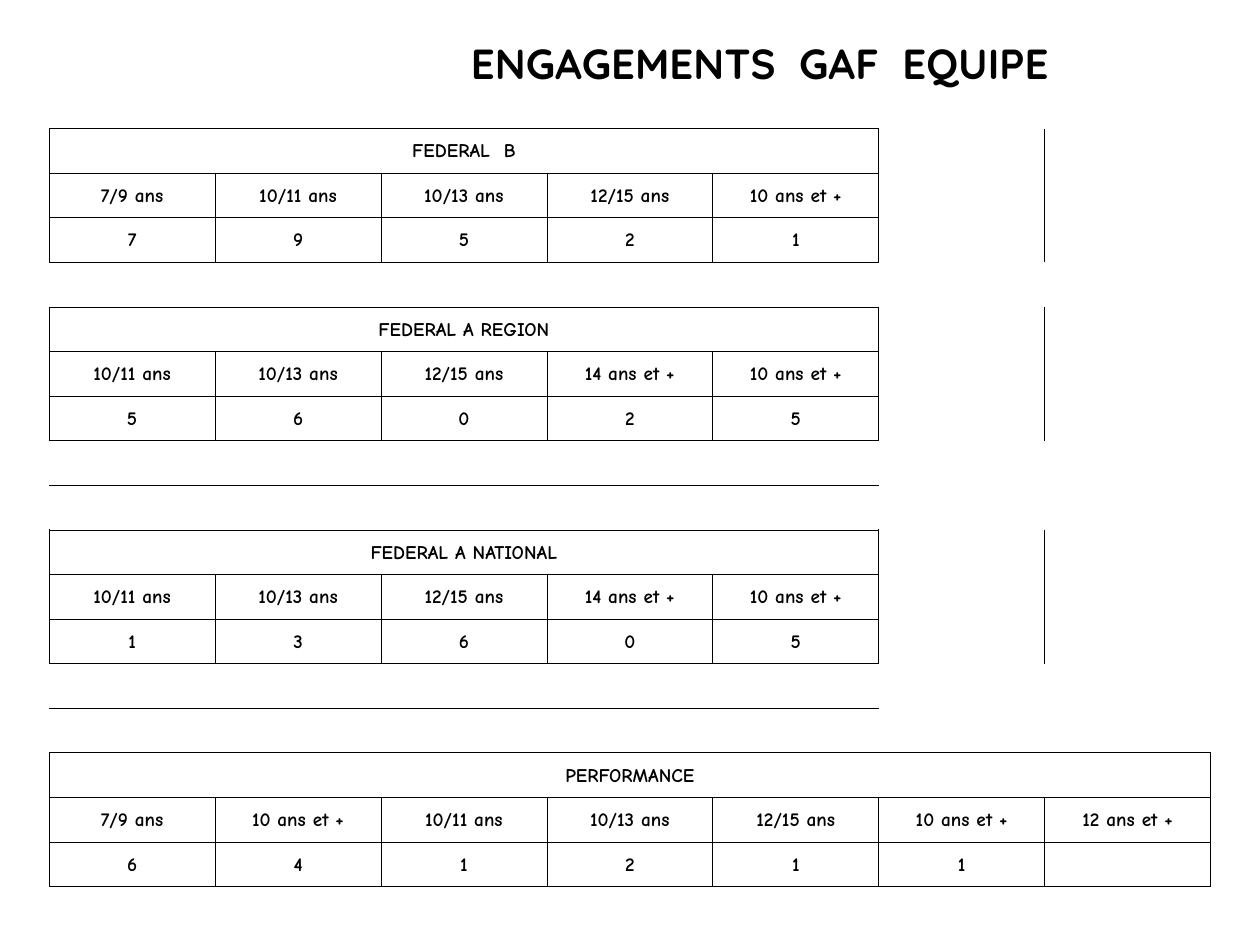
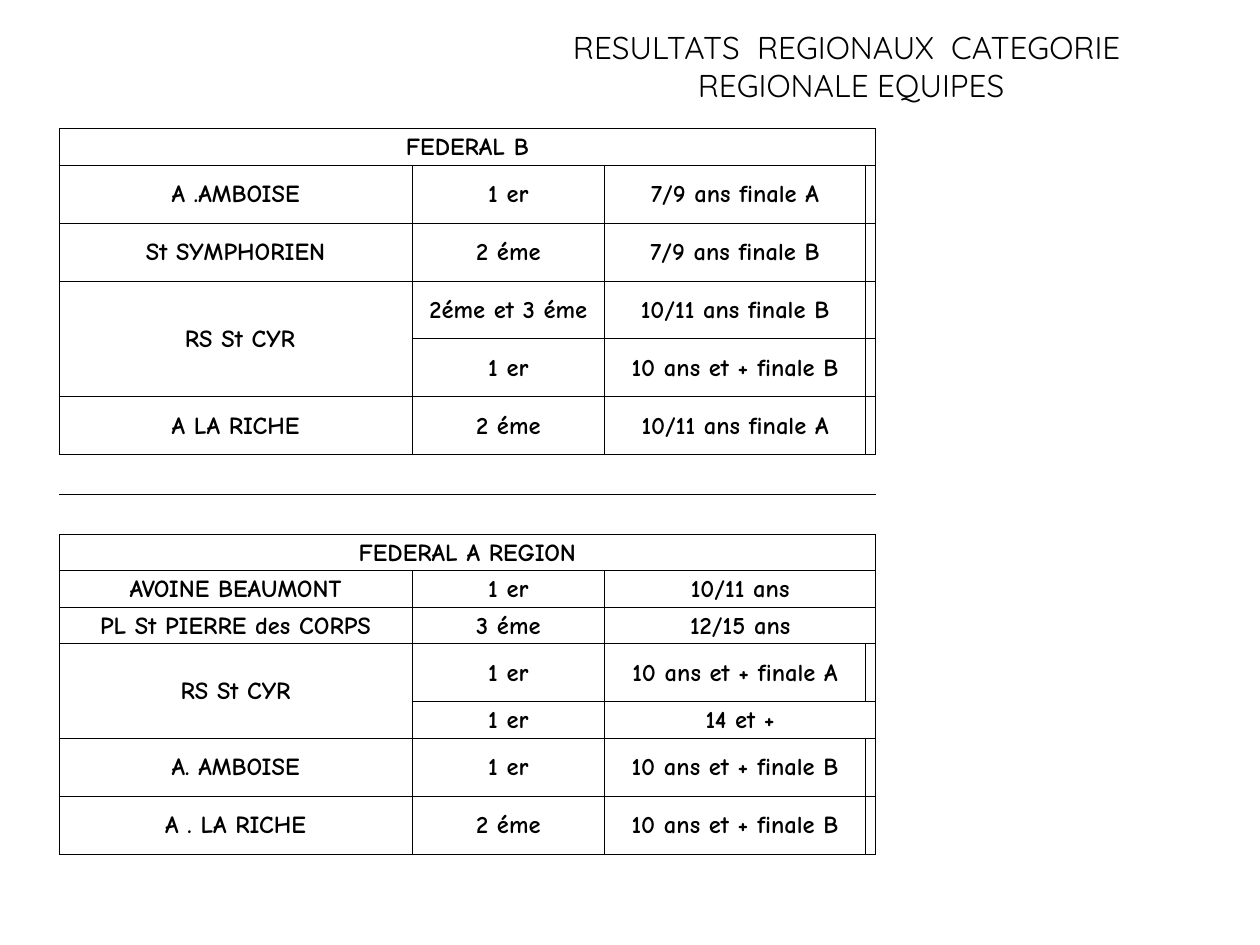
from dataclasses import dataclass

from lxml import etree
from pptx import Presentation
from pptx import util as u
from pptx.dml import color
from pptx.enum import text
from pptx.oxml import ns


@dataclass(frozen=True)
class Theme:
    ink: str = "000000"
    title_font: str = "Quicksand"
    table_font: str = "Comic Neue"
    title_large: int = 24
    title_small: int = 18
    entry_size: int = 11
    result_size: int = 14
    line_width: float = 0.5
    table_top: float = 1.02
    plain_table: str = "{2D5ABB26-0587-4C30-8999-92F81FD0307C}"


theme = Theme()
LEFT, UP = "<", "^"  # a cell joined to its left or upper neighbour
GAP = []


def add_titled_page(title, place, size, bold):
    page = deck.slides.add_slide(deck.slide_layouts[5])
    box = page.shapes.title
    box.left, box.top, box.width, box.height = map(u.Inches, place)
    frame = box.text_frame
    frame.text = title
    frame.word_wrap = True
    frame.auto_size = text.MSO_AUTO_SIZE.NONE
    frame.vertical_anchor = text.MSO_ANCHOR.TOP
    para = frame.paragraphs[0]
    para.alignment = text.PP_ALIGN.CENTER
    para.font.name, para.font.size, para.font.bold = theme.title_font, u.Pt(size), bold
    para.font.color.rgb = color.RGBColor.from_string(theme.ink)
    return page


def add_grid(page, left, widths, heights, rows, size):
    """Draw the blocks of one table; cells beyond the end of a row stay open."""
    frame = page.shapes.add_table(
        len(rows), len(widths), u.Inches(left), u.Inches(theme.table_top),
        u.Inches(sum(widths)), u.Inches(sum(heights)))
    table = frame.table
    table.first_row = table.horz_banding = False
    table._tbl.tblPr.find(ns.qn("a:tableStyleId")).text = theme.plain_table
    for column, width in zip(table.columns, widths):
        column.width = u.Inches(width)
    for row, height in zip(table.rows, heights):
        row.height = u.Inches(height)

    for r in range(len(rows)):
        for c in range(len(widths)):
            cell = table.cell(r, c)
            cell.margin_left = cell.margin_right = cell.margin_top = u.Inches(0.01)
            cell.margin_bottom = 0
            cell.vertical_anchor = text.MSO_ANCHOR.MIDDLE

            # An edge is ruled when a block lies on either side of it
            props = cell._tc.get_or_add_tcPr()
            sides = {"lnL": (0, -1), "lnR": (0, 1), "lnT": (-1, 0), "lnB": (1, 0)}
            for tag, (down, across) in sides.items():
                near = (r + down, c + across)
                if any(0 <= y < len(rows) and 0 <= x < len(rows[y])
                       for y, x in ((r, c), near)):
                    line = etree.SubElement(props, ns.qn("a:" + tag),
                                            w=str(u.Pt(theme.line_width)))
                    fill = etree.SubElement(line, ns.qn("a:solidFill"))
                    etree.SubElement(fill, ns.qn("a:srgbClr"), val=theme.ink)
            cell.fill.background()

            value = rows[r][c] if c < len(rows[r]) else ""
            if value in ("", LEFT, UP):
                continue
            cell.text = value
            para = cell.text_frame.paragraphs[0]
            para.alignment = text.PP_ALIGN.CENTER
            para.font.name, para.font.size, para.font.bold = theme.table_font, u.Pt(size), True
            para.font.color.rgb = color.RGBColor.from_string(theme.ink)

            # Join the cells marked as continuing this one
            right, bottom = c, r
            while right + 1 < len(rows[r]) and rows[r][right + 1] == LEFT:
                right += 1
            while bottom + 1 < len(rows) and rows[bottom + 1][c:c + 1] == [UP]:
                bottom += 1
            if (right, bottom) != (c, r):
                cell.merge(table.cell(bottom, right))


deck = Presentation()
deck.slide_width, deck.slide_height = u.Inches(10), u.Inches(7.5)

# Team entries: level, age groups, number of teams, gap rows below
levels = [
    ("FEDERAL  B", ["7/9 ans", "10/11 ans", "10/13 ans", "12/15 ans", "10 ans et +"],
     ["7", "9", "5", "2", "1"], 1),
    ("FEDERAL A REGION",
     ["10/11 ans", "10/13 ans", "12/15 ans", "14 ans et +", "10 ans et +"],
     ["5", "6", "0", "2", "5"], 2),
    ("FEDERAL A NATIONAL",
     ["10/11 ans", "10/13 ans", "12/15 ans", "14 ans et +", "10 ans et +"],
     ["1", "3", "6", "0", "5"], 2),
    ("PERFORMANCE",
     ["7/9 ans", "10 ans et +", "10/11 ans", "10/13 ans", "12/15 ans",
      "10 ans et +", "12 ans et +"],
     ["6", "4", "1", "2", "1", "1", ""], 0),
]
entries = []
for level, ages, counts, gaps in levels:
    entries += [[level] + [LEFT] * (len(ages) - 1), ages, counts] + [GAP] * gaps

page = add_titled_page("ENGAGEMENTS  GAF  EQUIPE", (3, 0.25, 6.06, 0.5),
                       theme.title_large, True)
add_grid(page, 0.39, [9.22 / 7] * 7, [6.02 / len(entries)] * len(entries),
         entries, theme.entry_size)

# Regional results: club, rank, category, narrow end column
results = [
    ["FEDERAL B", LEFT, LEFT, LEFT],
    ["A .AMBOISE", "1 er", "7/9 ans finale A", ""],
    ["St SYMPHORIEN", "2 éme", "7/9 ans finale B", ""],
    [" RS St CYR", "2éme et 3 éme", "10/11 ans finale B", ""],
    [UP, "1 er", "10 ans et + finale B", ""],
    ["A LA RICHE", "2 éme", "10/11 ans finale A", ""],
    GAP,
    GAP,
    ["FEDERAL A REGION", LEFT, LEFT, LEFT],
    ["AVOINE BEAUMONT", "1 er", "10/11 ans", LEFT],
    ["PL St PIERRE des CORPS", "3 éme", "12/15 ans", LEFT],
    ["RS St CYR", "1 er", "10 ans et + finale A", ""],
    [UP, "1 er", "14 et +", LEFT],
    ["A. AMBOISE", "1 er", "10 ans et + finale B", ""],
    ["A . LA RICHE", "2 éme", "10 ans et + finale B", ""],
]
# Rows with an open end column are tall
heights = [0.3 if row == GAP else 0.46 if row[-1] == "" else 0.29 for row in results]

page = add_titled_page("RESULTATS  REGIONAUX  CATEGORIE  REGIONALE EQUIPES",
                       (4.17, 0.17, 5.17, 0.71), theme.title_small, False)
add_grid(page, 0.47, [2.8, 1.53, 2.07, 0.08], heights, results, theme.result_size)

deck.save("out.pptx")
